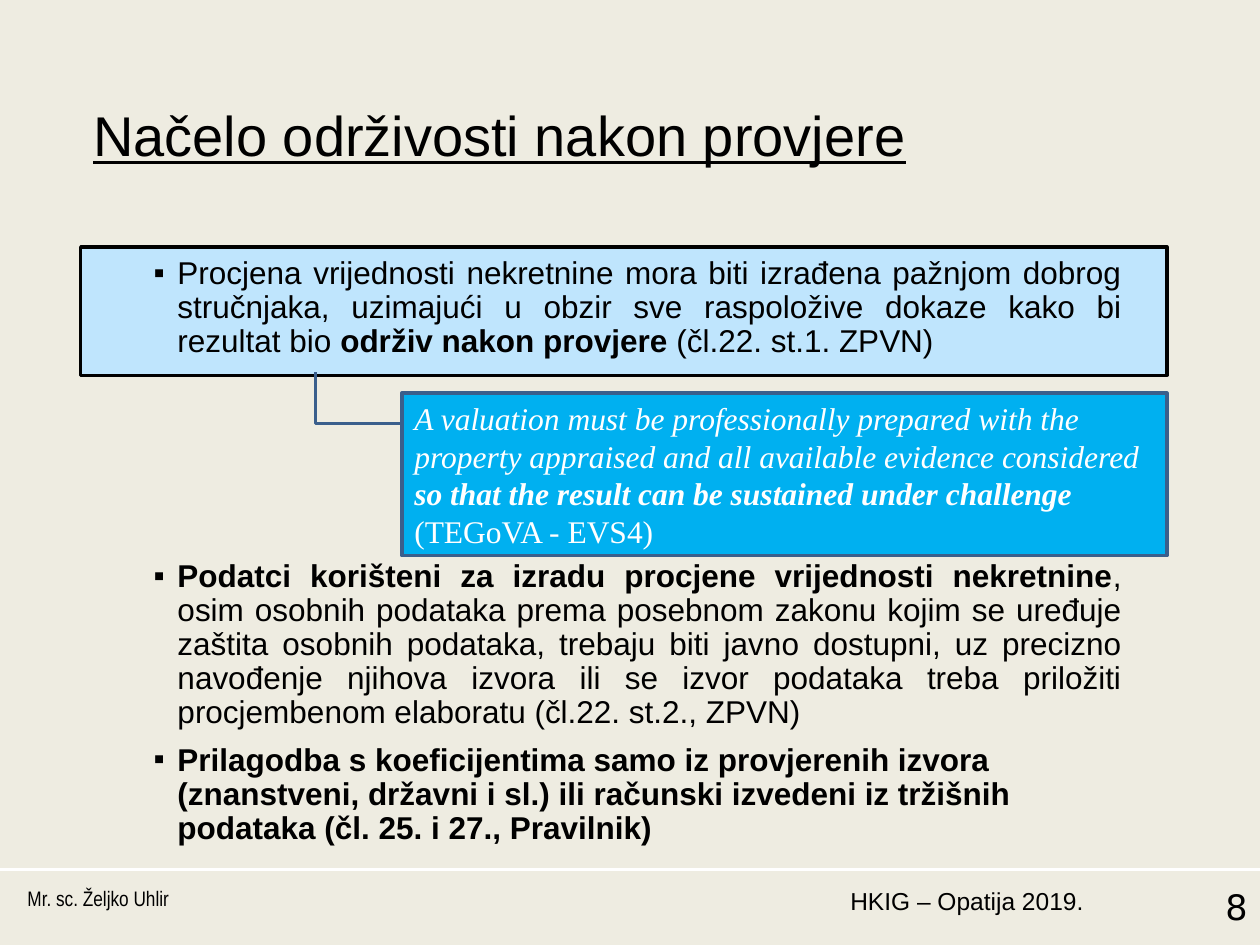
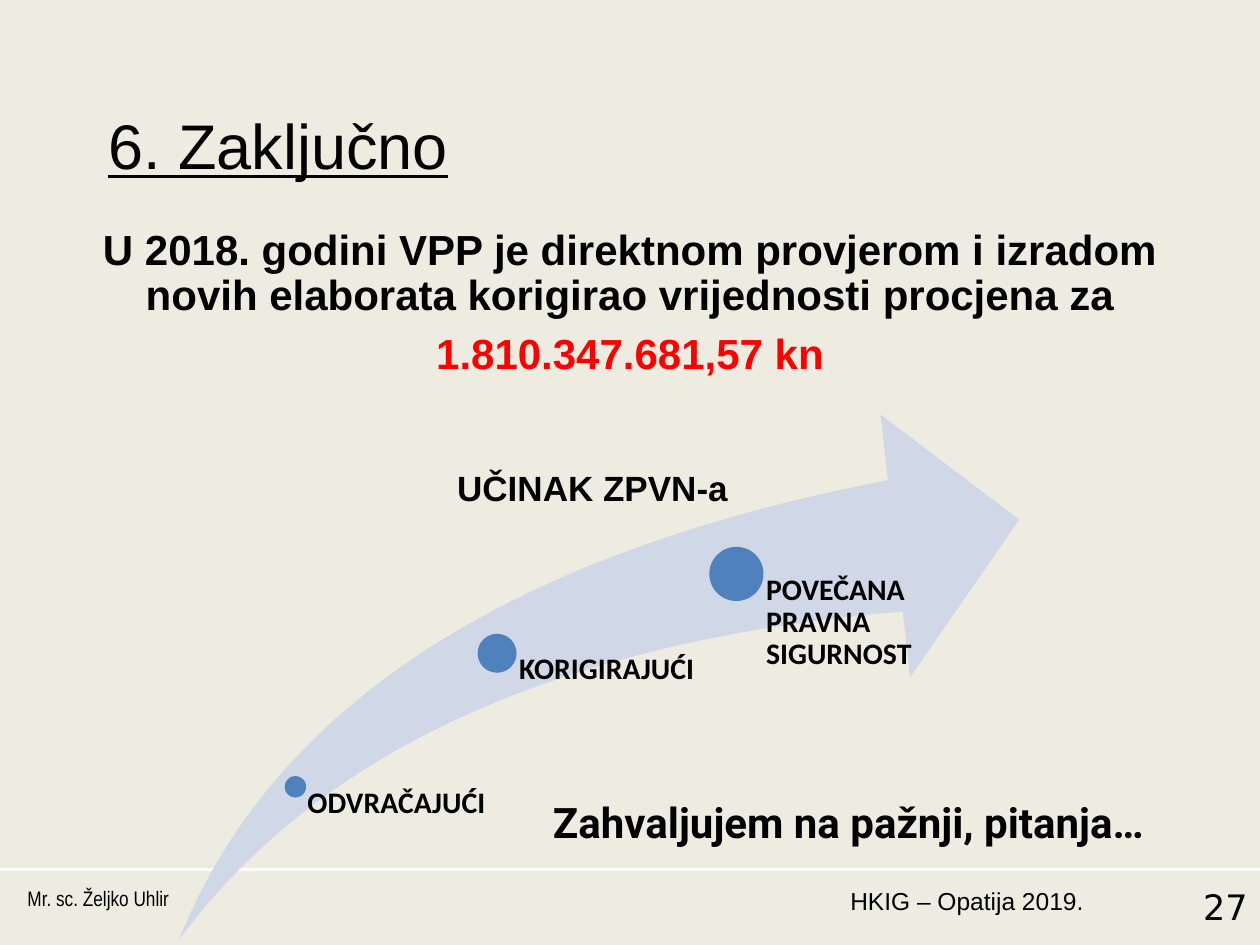
from lxml.etree import SubElement
from pptx import Presentation
from pptx.dml.color import RGBColor
from pptx.enum.shapes import MSO_CONNECTOR as Line, MSO_SHAPE as Kind
from pptx.enum.text import MSO_ANCHOR as Anchor, PP_ALIGN as Align
from pptx.oxml.ns import qn
from pptx.util import Emu, Pt

EMU_PER_PX = 9144  # 100 px to the inch
WIDTH, HEIGHT = 1000, 750

BEIGE = RGBColor(0xEE, 0xEC, 0xE1)
WHITE = RGBColor(0xFF, 0xFF, 0xFF)
BLACK = RGBColor(0, 0, 0)
RED = RGBColor(0xFF, 0, 0)
PALE_BLUE = RGBColor(0xBF, 0xE5, 0xFD)
SKY = RGBColor(0x00, 0xB0, 0xF0)
NAVY = RGBColor(0x3A, 0x5F, 0x8C)
SWOOSH = RGBColor(0xD0, 0xD8, 0xE8)
DOT = RGBColor(0x4F, 0x81, 0xBD)


def px(length):
    return Emu(length * EMU_PER_PX)


def add_span(para, text, font="Arial", size=18, color=BLACK,
             bold=False, italic=False, underline=False):
    span = para.add_run()
    span.text = text
    span.font.name = font
    span.font.size = Pt(size)
    span.font.color.rgb = color
    span.font.bold = bold
    span.font.italic = italic
    span.font.underline = underline


def add_bullet(para, indent=19):
    props = para._p.get_or_add_pPr()
    props.set("marL", str(px(indent)))
    props.set("indent", str(px(-indent)))
    SubElement(props, qn("a:buFont"), typeface="Arial")
    SubElement(props, qn("a:buChar"), char="▪")


class SlideMaker:
    """Holds the shared style and the slide being built."""

    def __init__(self):
        self.deck = Presentation()
        self.deck.slide_width, self.deck.slide_height = px(WIDTH), px(HEIGHT)
        self.page = None

    def new_page(self, title, number, left, top, size):
        self.page = self.deck.slides.add_slide(self.deck.slide_layouts[6])
        self.page.background.fill.solid()
        self.page.background.fill.fore_color.rgb = BEIGE
        self.rule(690)
        self.text(title, left, top, 862, 66, size=size, underline=True)
        # Footer: author, event and page number
        footer = dict(top=698, height=52)
        self.text("Mr. sc. Željko Uhlir", 12, width=654, font="Arial Narrow", size=12, **footer)
        self.text("HKIG – Opatija 2019.", 657, width=213, size=14, align=Align.RIGHT, **footer)
        self.text(str(number), 878, width=122, font="DejaVu Sans", size=20,
                  align=Align.RIGHT, **footer)

    def rule(self, y):
        line = self.page.shapes.add_connector(Line.STRAIGHT, px(0), px(y), px(WIDTH), px(y))
        line.line.color.rgb = WHITE
        line.line.width = Pt(1.5)
        SubElement(line._element.spPr, qn("a:effectLst"))

    def shape(self, kind, left, top, width, height, fill, border=None, adjust=()):
        shape = self.page.shapes.add_shape(kind, px(left), px(top), px(width), px(height))
        shape.shadow.inherit = False
        shape.fill.solid()
        shape.fill.fore_color.rgb = fill
        if border is None:
            shape.line.fill.background()
        else:
            shape.line.color.rgb = border
            shape.line.width = Pt(2)
        for index, value in enumerate(adjust):
            shape.adjustments[index] = value
        return shape

    def body(self, left, top, width, height, insets=(10, 5, 10, 5)):
        box = self.page.shapes.add_textbox(px(left), px(top), px(width), px(height))
        frame = box.text_frame
        (frame.margin_left, frame.margin_top,
         frame.margin_right, frame.margin_bottom) = map(px, insets)
        return frame

    def text(self, text, left, top, width, height, insets=(10, 5, 10, 5), **style):
        frame = self.body(left, top, width, height, insets)
        self.para(frame, [(text, {})], first=True, **style)

    def para(self, frame, spans, first=False, bullet=False, align=Align.LEFT,
             spacing=None, **style):
        frame.word_wrap = True
        para = frame.paragraphs[0] if first else frame.add_paragraph()
        para.alignment = align
        if spacing:
            para.line_spacing = spacing
        if not first:
            para.space_before = Pt(7.5)
        if bullet:
            add_bullet(para)
        for text, changes in spans:
            add_span(para, text, **{**style, **changes})


def build_sustainability(maker):
    maker.new_page("Načelo održivosti nakon provjere", 8, left=64, top=75, size=32)
    bold = dict(bold=True)
    item = dict(bullet=True, spacing=0.9)

    # Framed principle
    maker.shape(Kind.RECTANGLE, 64, 196, 862, 102, PALE_BLUE, BLACK)
    maker.para(maker.body(112, 199, 788, 95), [
        ("Procjena vrijednosti nekretnine mora biti izrađena pažnjom dobrog stručnjaka, "
         "uzimajući u obzir sve raspoložive dokaze kako bi rezultat bio ", {}),
        ("održiv nakon provjere ", bold),
        ("(čl.22. st.1. ZPVN)", {}),
    ], first=True, align=Align.JUSTIFY, **item)

    # Callout with the English wording
    callout = maker.shape(Kind.LINE_CALLOUT_2, 319, 312, 607, 129, SKY, NAVY,
                          adjust=(0.188, 0.002, 0.188, -0.113, -0.128, -0.113))
    callout.text_frame.vertical_anchor = Anchor.MIDDLE
    maker.para(callout.text_frame, [
        ("A valuation must be professionally prepared with the property appraised "
         "and all available evidence considered ", {}),
        ("so that the result can be sustained under challenge ", bold),
        ("(TEGoVA - EVS4)", dict(italic=False)),
    ], first=True, font="Times New Roman", color=WHITE, italic=True)

    # Requirements on data
    frame = maker.body(112, 440, 788, 240)
    maker.para(frame, [
        ("Podatci korišteni za izradu procjene vrijednosti nekretnine", bold),
        (", osim osobnih podataka prema posebnom zakonu kojim se uređuje zaštita osobnih "
         "podataka, trebaju biti javno dostupni, uz precizno navođenje njihova izvora ili se "
         "izvor podataka treba priložiti procjembenom elaboratu (čl.22. st.2., ZPVN)", {}),
    ], first=True, align=Align.JUSTIFY, **item)
    maker.para(frame, [
        ("Prilagodba s koeficijentima samo iz provjerenih izvora (znanstveni, državni i sl.) "
         "ili računski izvedeni iz tržišnih podataka (čl. 25. i 27., Pravilnik)", bold),
    ], **item)


def build_conclusion(maker):
    maker.new_page("6. Zaključno", 27, left=76, top=80, size=36)

    # Corrected amount
    frame = maker.body(69, 177, 862, 140)
    centred = dict(align=Align.CENTER, spacing=0.9, size=24, bold=True)
    maker.para(frame, [
        ("U 2018. godini VPP je direktnom provjerom i izradom novih elaborata "
         "korigirao vrijednosti procjena za", {}),
    ], first=True, **centred)
    maker.para(frame, [("1.810.347.681,57 kn", dict(color=RED))], **centred)

    # Rising arrow; each label starts at the centre of its dot
    arrow_bottom = 746
    maker.shape(Kind.SWOOSH_ARROW, 142, 329, 667, 417, SWOOSH, adjust=(0.25, 0.25))
    for label, x, y, size in (
        ("ODVRAČAJUĆI", 235, 625, 17),
        ("KORIGIRAJUĆI", 395, 519, 31),
        ("POVEČANA PRAVNA SIGURNOST", 585, 456, 43),
    ):
        maker.shape(Kind.OVAL, x - size // 2 - 1, y - size // 2 - 1, size, size, DOT)
        maker.text(label, x, y, 160, arrow_bottom - y, insets=(round(size * 0.54), 0, 0, 0),
                   font="Calibri", size=17, bold=True, spacing=0.9)

    # Arrow heading and closing words
    maker.text("UČINAK ZPVN-a", 353, 365, 240, 44, size=20, bold=True)
    maker.text("Zahvaljujem na pažnji, pitanja…", 429, 627, 571, 50,
               font="Roboto", size=24, bold=True)


def main():
    maker = SlideMaker()
    build_sustainability(maker)
    build_conclusion(maker)
    maker.deck.save("out.pptx")


if __name__ == "__main__":
    main()
